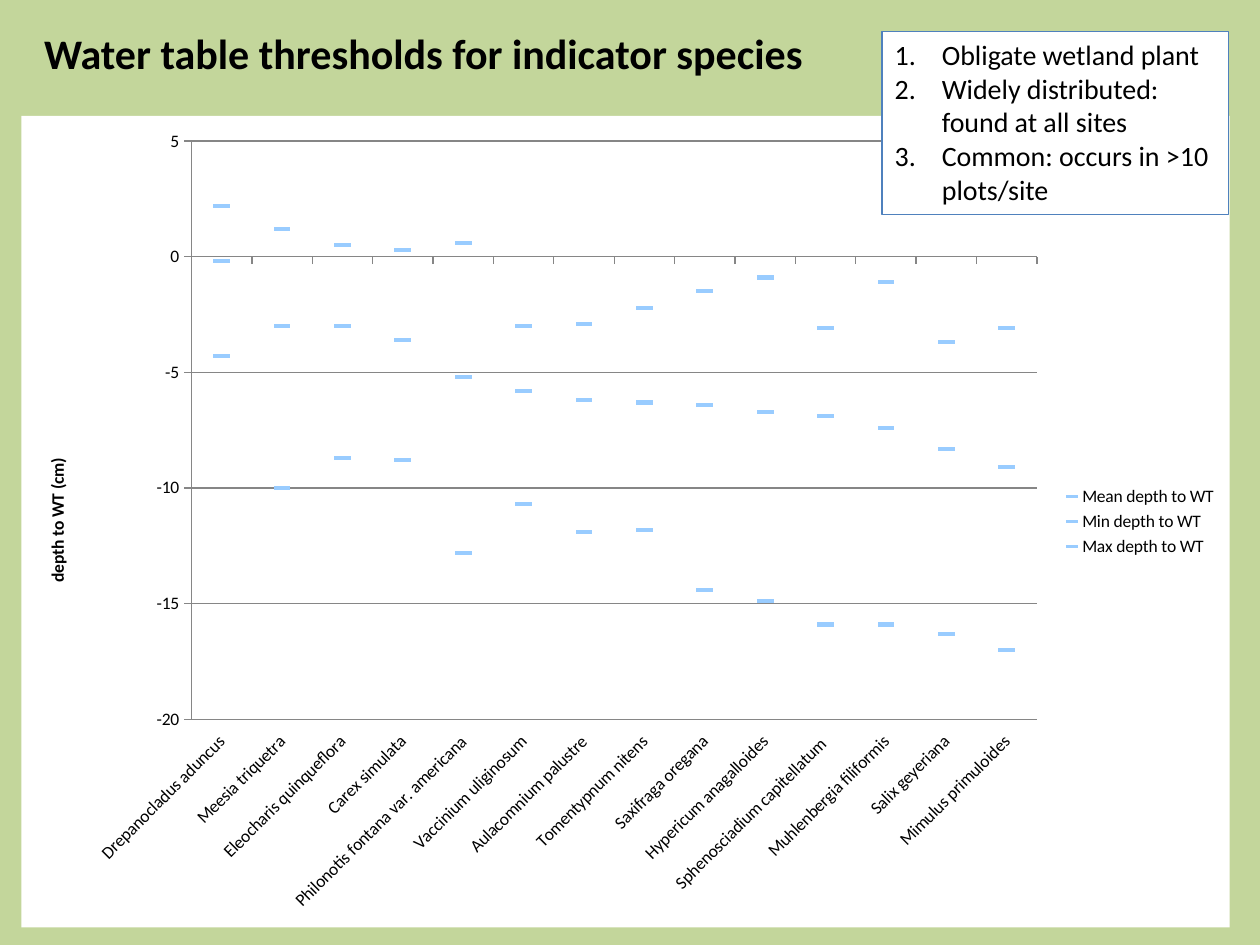
import lxml.etree
import pptx
import pptx.chart.data
import pptx.dml.color
import pptx.enum.chart
import pptx.enum.text
import pptx.oxml
import pptx.oxml.ns
import pptx.util
from pptx.util import Inches

COLORS = {
    "background": "C3D69B",
    "panel": "FFFFFF",
    "text": "000000",
    "border": "4F81BD",
    "marker": "99CCFF",
    "axis": "868686",
}
FONT = "Calibri"
TITLE = "Water table thresholds for indicator species"
CRITERIA = [
    "Obligate wetland plant",
    "Widely distributed: found at all sites",
    "Common: occurs in >10 plots/site",
]
SPECIES = [
    ("Drepanocladus aduncus", -0.2, -4.3, 2.2),
    ("Meesia triquetra", -3, -10, 1.2),
    ("Eleocharis quinqueflora", -3, -8.7, 0.5),
    ("Carex simulata", -3.6, -8.8, 0.3),
    ("Philonotis fontana var. americana", -5.2, -12.8, 0.6),
    ("Vaccinium uliginosum", -5.8, -10.7, -3),
    ("Aulacomnium palustre", -6.2, -11.9, -2.9),
    ("Tomentypnum nitens", -6.3, -11.8, -2.2),
    ("Saxifraga oregana", -6.4, -14.4, -1.5),
    ("Hypericum anagalloides", -6.7, -14.9, -0.9),
    ("Sphenosciadium capitellatum ", -6.9, -15.9, -3.1),
    ("Muhlenbergia filiformis", -7.4, -15.9, -1.1),
    ("Salix geyeriana", -8.3, -16.3, -3.7),
    ("Mimulus primuloides", -9.1, -17, -3.1),
]
SERIES = ["Mean depth to WT", "Min depth to WT", "Max depth to WT"]


def color(name):
    return pptx.dml.color.RGBColor.from_string(COLORS[name])


def fill_solid(fill, name):
    fill.solid()
    fill.fore_color.rgb = color(name)


def style_font(font, size, bold=False):
    font.name = FONT
    font.size = pptx.util.Pt(size)
    font.bold = bold
    font.color.rgb = color("text")


def place(shape, box):
    shape.left, shape.top, shape.width, shape.height = (Inches(v) for v in box)


def set_layout(parent, **values):
    for old in parent.findall(pptx.oxml.ns.qn("c:layout")):
        parent.remove(old)
    layout = lxml.etree.Element(pptx.oxml.ns.qn("c:layout"))
    manual = lxml.etree.SubElement(layout, pptx.oxml.ns.qn("c:manualLayout"))
    for tag, value in values.items():
        item = lxml.etree.SubElement(manual, pptx.oxml.ns.qn("c:" + tag))
        item.set("val", str(value))
    text = parent.find(pptx.oxml.ns.qn("c:tx"))
    parent.insert(0 if text is None else parent.index(text) + 1, layout)


def add_title(page, box):
    title = page.shapes.title
    place(title, box)
    frame = title.text_frame
    frame.word_wrap = False
    frame.auto_size = pptx.enum.text.MSO_AUTO_SIZE.NONE
    para = frame.paragraphs[0]
    para.alignment = pptx.enum.text.PP_ALIGN.LEFT
    span = para.add_run()
    span.text = TITLE
    style_font(span.font, 24, True)


def add_criteria(page, box):
    body = page.placeholders[1]
    place(body, box)
    fill_solid(body.fill, "panel")
    body.line.color.rgb = color("border")
    body.line.width = pptx.util.Pt(0.75)
    frame = body.text_frame
    frame.word_wrap = True
    frame.auto_size = pptx.enum.text.MSO_AUTO_SIZE.NONE
    indent = pptx.util.Pt(27)
    for index, text in enumerate(CRITERIA):
        para = frame.add_paragraph() if index else frame.paragraphs[0]
        para.space_before = pptx.util.Pt(0)
        span = para.add_run()
        span.text = text
        style_font(span.font, 16)
        properties = para._p.get_or_add_pPr()
        properties.set("marL", str(indent))
        properties.set("indent", str(-indent))
        number = lxml.etree.SubElement(properties, pptx.oxml.ns.qn("a:buAutoNum"))
        number.set("type", "arabicPeriod")


def style_axes(chart, width, height):
    depth, species = chart.value_axis, chart.category_axis
    for axis in (depth, species):
        axis.major_tick_mark = pptx.enum.chart.XL_TICK_MARK.OUTSIDE
        axis.minor_tick_mark = pptx.enum.chart.XL_TICK_MARK.NONE
        axis.format.line.color.rgb = color("axis")
        style_font(axis.tick_labels.font, 10)
    depth.minimum_scale, depth.maximum_scale, depth.major_unit = -20, 5, 5
    depth.has_major_gridlines = True
    depth.major_gridlines.format.line.color.rgb = color("axis")
    depth.tick_labels.number_format = "General"
    depth.tick_labels.number_format_is_linked = False
    species.tick_label_position = pptx.enum.chart.XL_TICK_LABEL_POSITION.LOW
    species._element.txPr.bodyPr.set("rot", str(-45 * 60000))

    span = depth.axis_title.text_frame.paragraphs[0].add_run()
    span.text = "depth to WT (cm)"
    style_font(span.font, 10, True)
    heading = depth.axis_title._element
    heading.find(".//" + pptx.oxml.ns.qn("a:bodyPr")).set("rot", str(-90 * 60000))
    set_layout(heading, xMode="edge", yMode="edge", x=0.17 / width, y=2.69 / height)


def add_depth_chart(page, box, plot):
    left, top, width, height = box
    plot_left, plot_top, plot_width, plot_height = plot
    data = pptx.chart.data.CategoryChartData()
    names, *columns = zip(*SPECIES)
    data.categories = names
    for name, values in zip(SERIES, columns):
        data.add_series(name, values)
    graphic = page.shapes.add_chart(
        pptx.enum.chart.XL_CHART_TYPE.LINE_MARKERS, *(Inches(v) for v in box), data
    )
    page.shapes.element.insert(2, graphic._element)
    chart = graphic.chart
    style_font(chart.font, 10)
    chart.has_title = False
    chart.has_legend = True
    chart.legend.position = pptx.enum.chart.XL_LEGEND_POSITION.RIGHT
    chart.legend.include_in_layout = False
    style_font(chart.legend.font, 10)
    style_axes(chart, width, height)

    for series in chart.plots[0].series:
        series.smooth = False
        series.format.line.fill.background()
        series.marker.style = pptx.enum.chart.XL_MARKER_STYLE.DASH
        series.marker.size = 9
        fill_solid(series.marker.format.fill, "marker")
        series.marker.format.line.color.rgb = color("marker")

    space = chart._chartSpace
    plot_area = space.find(".//" + pptx.oxml.ns.qn("c:plotArea"))
    set_layout(plot_area, layoutTarget="inner", xMode="edge", yMode="edge",
               x=(plot_left - left) / width, y=(plot_top - top) / height,
               w=plot_width / width, h=plot_height / height)
    panel = pptx.oxml.parse_xml(
        f'<c:spPr {pptx.oxml.ns.nsdecls("c", "a")}><a:solidFill>'
        f'<a:srgbClr val="{COLORS["panel"]}"/></a:solidFill>'
        '<a:ln><a:noFill/></a:ln></c:spPr>'
    )
    space.find(pptx.oxml.ns.qn("c:chart")).addnext(panel)


def main():
    deck = pptx.Presentation()
    deck.slide_width, deck.slide_height = Inches(10), Inches(7.5)
    page = deck.slides.add_slide(deck.slide_layouts[1])
    fill_solid(page.background.fill, "background")
    add_title(page, (0.25, 0.17, 6.29, 0.5))
    add_criteria(page, (7, 0.25, 2.75, 1.45))
    add_depth_chart(page, (0.17, 0.92, 9.59, 6.44), (1.52, 1.12, 6.71, 4.59))
    deck.save("out.pptx")


if __name__ == "__main__":
    main()
